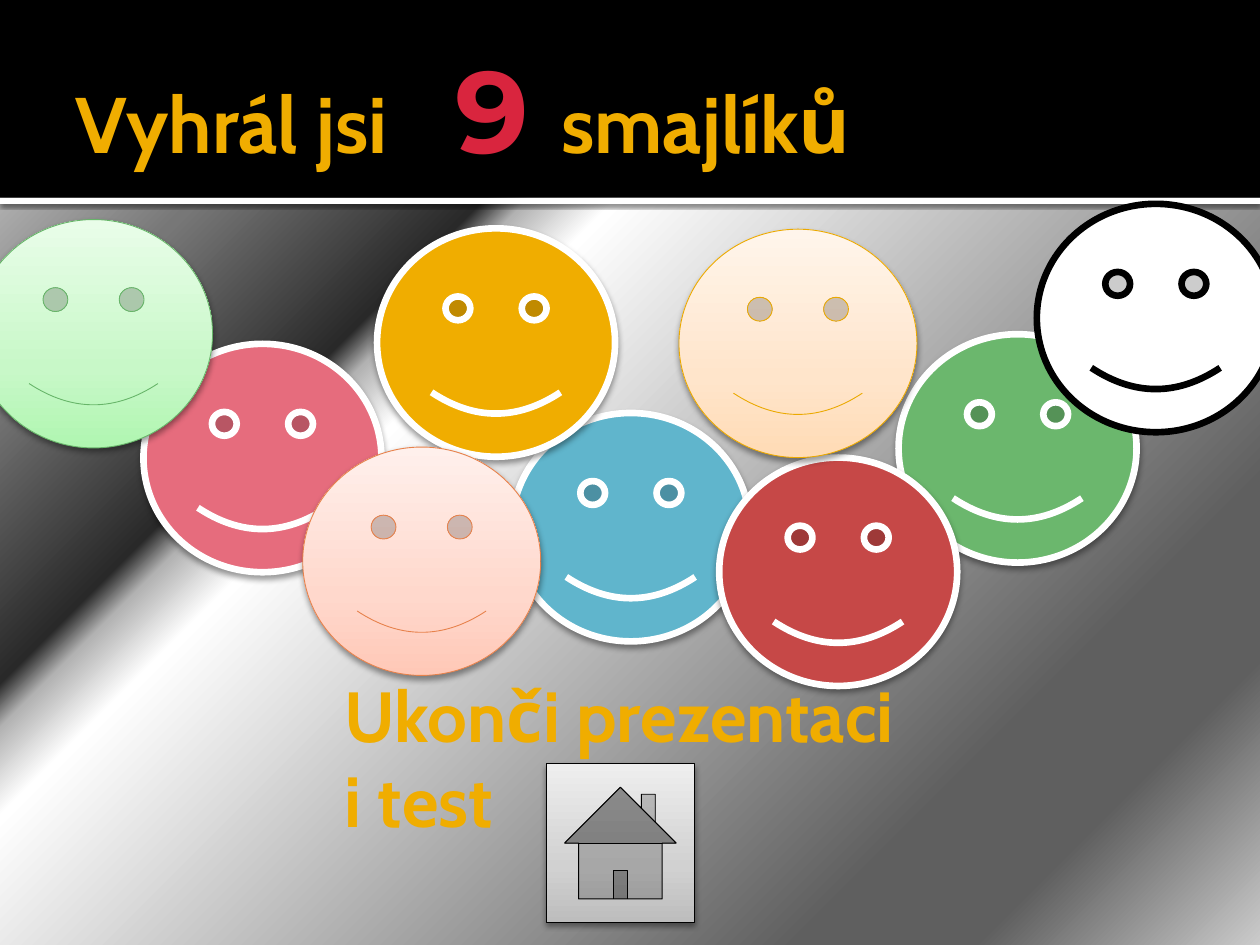
"""Build the slide that announces nine smileys won."""
from dataclasses import dataclass

from pptx import Presentation
from pptx import util as u
from pptx.dml.color import RGBColor
from pptx.enum import shapes, text
from pptx.oxml import parse_xml
from pptx.oxml.ns import nsdecls, qn

Pt = u.Pt
KIND = shapes.MSO_SHAPE


@dataclass(frozen=True)
class Theme:
    """Colours, fonts and type sizes."""
    gold: str = "F0AD00"
    red: str = "D9253E"
    white: str = "FFFFFF"
    black: str = "000000"
    body: str = "Cabin"
    digit: str = "Montserrat"
    head: float = 45
    count: float = 66
    note: float = 40.5
    thick: float = 3.8
    thin: float = 0.5
    soft: tuple = (38, 3.5, 2)
    tight: tuple = (60, 2.5, 0.8)
    back: tuple = ((0, "CBCBCB"), (13, "5F5F5F"), (21, "5F5F5F"), (63, "FFFFFF"),
                   (67, "B2B2B2"), (69, "292929"), (82, "777777"), (100, "EAEAEA"))
    grey: tuple = ("BDBDBD", "D1D1D1", "EEEEEE")
    mint: tuple = ("B0F6B1", "C8F8C8", "E9FDE9")
    peach: tuple = ("FFDBB5", "FFE5CB", "FFF5EB")
    rose: tuple = ("FFC8B7", "FFD8CC", "FFF0EC")


T = Theme()
SIZE = (136, 130.5)
UP = '<a:lin ang="16200000" scaled="1"/>'
CORNER = '<a:path path="circle"><a:fillToRect l="100000" t="100000"/></a:path>'

FACES = (
    (292.5, 236, "60B5CC", T.white),
    (82, 196.5, "E66C7D", T.white),
    (513.5, 191, "6BB76D", T.white),
    (215.5, 130.5, T.gold, T.white),
    (411, 261.5, "C64847", T.white),
    (592.5, 116.5, T.white, T.black),
    (-14.5, 125.5, T.mint, "67B569"),
    (388, 131, T.peach, "EBA900"),
    (173, 255.5, T.rose, "E7824C"),
)


def rgb(code):
    """Turn a hex code into a colour."""
    return RGBColor.from_string(code)


def blend(fill, host, stops, aim):
    """Give a fill a gradient with the stops and direction given."""
    fill.gradient()
    old = next(host.iter(qn("a:gradFill")))
    marks = "".join(f'<a:gs pos="{at * 1000}"><a:srgbClr val="{code}"/></a:gs>'
                    for at, code in stops)
    new = parse_xml(f'<a:gradFill {nsdecls("a")} rotWithShape="1">'
                    f'<a:gsLst>{marks}</a:gsLst>{aim}</a:gradFill>')
    old.getparent().replace(old, new)


def shade(shape, alpha, blur, drop):
    """Cast a shadow straight down."""
    shape._element.spPr.find(qn("a:effectLst")).append(parse_xml(
        f'<a:outerShdw {nsdecls("a")} blurRad="{Pt(blur)}" dist="{Pt(drop)}" '
        f'dir="5400000" rotWithShape="0"><a:srgbClr val="{T.black}">'
        f'<a:alpha val="{alpha * 1000}"/></a:srgbClr></a:outerShdw>'))


def form(slide, kind, box, paint, line=None, width=T.thin, dark=None):
    """Add a preset shape with a plain or three-stop fill."""
    shape = slide.shapes.add_shape(kind, *map(Pt, box))
    shape.shadow.inherit = False
    if isinstance(paint, str):
        shape.fill.solid()
        shape.fill.fore_color.rgb = rgb(paint)
    else:
        blend(shape.fill, shape._element, zip((0, 35, 100), paint), UP)
    if line:
        shape.line.color.rgb = rgb(line)
        shape.line.width = Pt(width)
    else:
        shape.line.fill.background()
    if dark:
        shade(shape, *dark)


def face(slide, left, top, paint, line):
    """Add one smiley."""
    width = T.thick if isinstance(paint, str) else T.thin
    dark = None if line == T.black else T.soft
    form(slide, KIND.SMILEY_FACE, (left, top, *SIZE), paint, line, width, dark)


def write(para, words, size=T.head, font=T.body, color=T.gold):
    """Add a bold run of text."""
    run = para.add_run()
    run.text = words
    run.font.size = Pt(size)
    run.font.name = font
    run.font.bold = True
    run.font.color.rgb = rgb(color)


def panel(slide, box, tab=None):
    """Add a text box and return its first paragraph."""
    frame = slide.shapes.add_textbox(*map(Pt, box)).text_frame
    frame.word_wrap = True
    frame.vertical_anchor = text.MSO_ANCHOR.MIDDLE
    frame.margin_left = Pt(7.2)
    frame.margin_right = frame.margin_top = frame.margin_bottom = Pt(3.6)
    para = frame.paragraphs[0]
    if tab:
        para._p.get_or_add_pPr().append(parse_xml(
            f'<a:tabLst {nsdecls("a")}><a:tab pos="{Pt(tab)}" algn="l"/></a:tabLst>'))
    return para


def main():
    """Build and save the slide."""
    deck = Presentation()
    deck.slide_width, deck.slide_height = Pt(720), Pt(540)
    slide = deck.slides.add_slide(deck.slide_layouts[6])
    blend(slide.background.fill, slide._element, T.back, CORNER)

    form(slide, KIND.RECTANGLE, (0, 113, 720, 3.6), T.white, dark=T.tight)
    form(slide, KIND.RECTANGLE, (0, 0, 720, 113), T.black)
    title = panel(slide, (36, 12, 648, 98.5), tab=217)
    write(title, "Vyhrál jsi\t")
    write(title, "9 ", size=T.count, font=T.digit, color=T.red)
    write(title, "smajlíků")

    for item in FACES:
        face(slide, *item)

    form(slide, KIND.ACTION_BUTTON_HOME, (312, 436.5, 85, 90.5), T.grey,
         T.black, dark=T.soft)
    note = panel(slide, (190, 383, 345.5, 98.5))
    write(note, "Ukonči prezentaci", size=T.note)
    note.add_line_break()
    write(note, "i test", size=T.note)
    deck.save("out.pptx")


if __name__ == "__main__":
    main()
